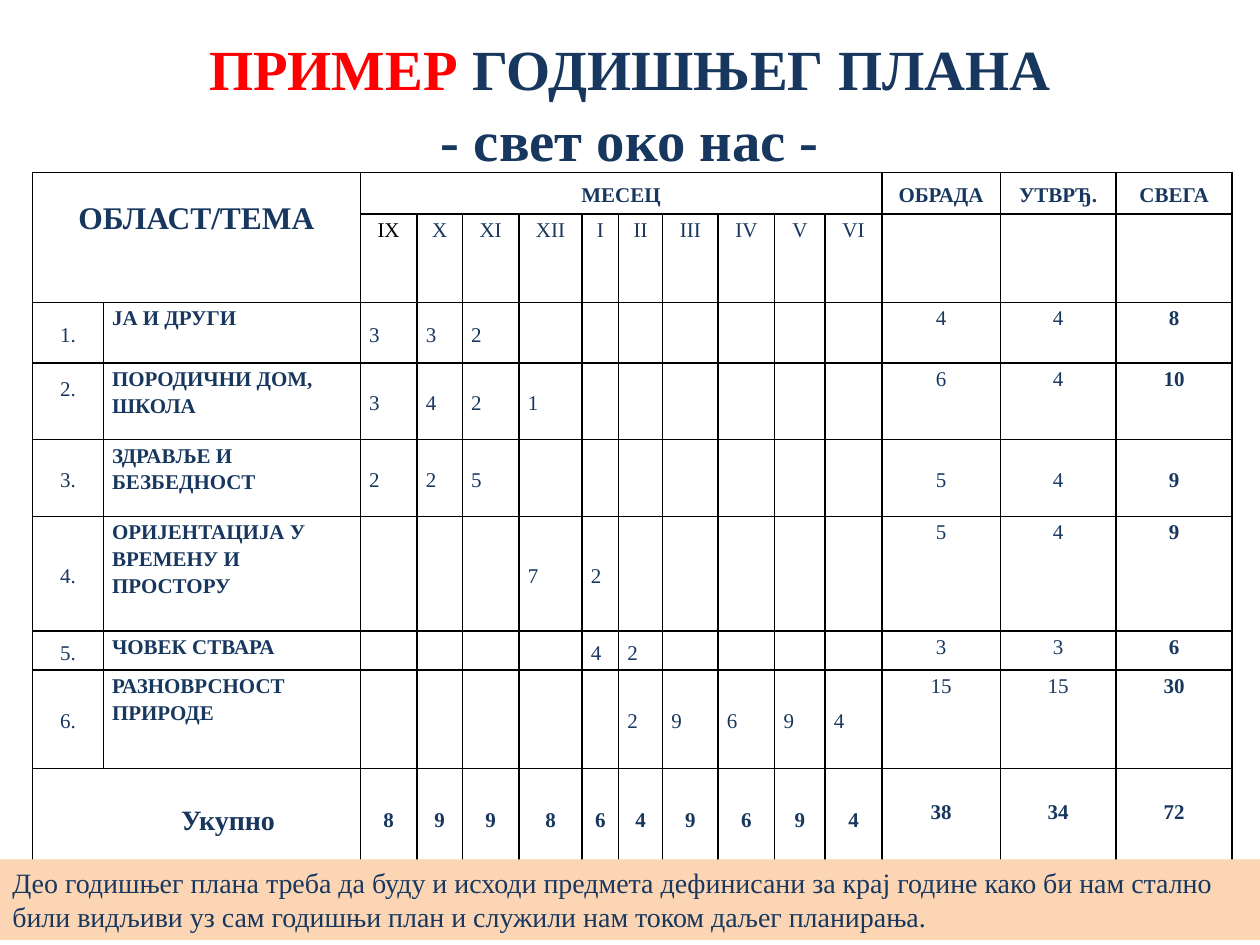
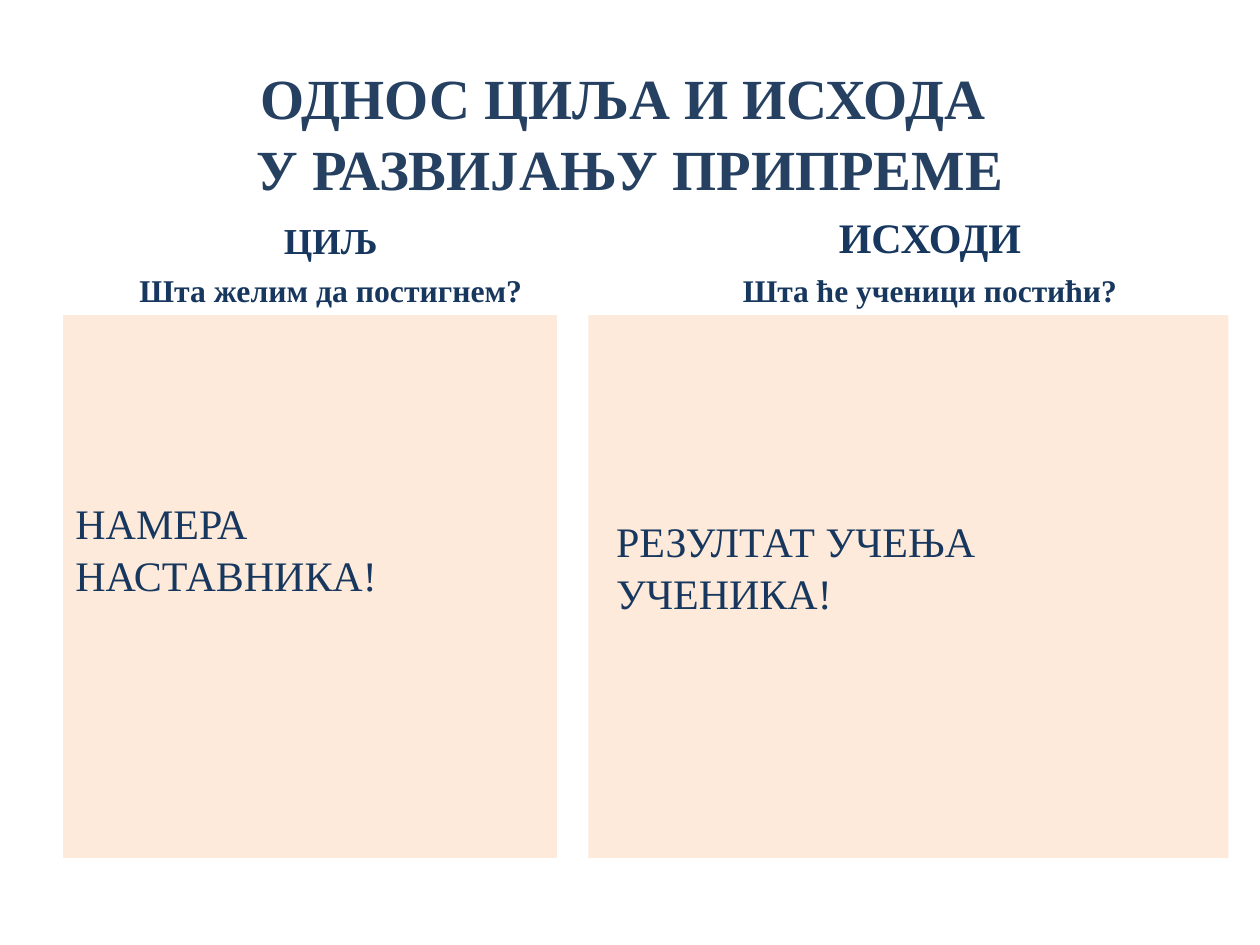
"""Builds two slides: a yearly lesson plan table, and goals set against outcomes."""
from dataclasses import dataclass

from lxml import etree
from pptx import Presentation
from pptx.dml.color import RGBColor
from pptx.enum.shapes import MSO_SHAPE
from pptx.enum.text import MSO_ANCHOR, PP_ALIGN
from pptx.oxml.ns import qn
from pptx.util import Emu, Inches, Pt

LEFT, MID, JUST = PP_ALIGN.LEFT, PP_ALIGN.CENTER, PP_ALIGN.JUSTIFY
TOP, CENTER, BASE = MSO_ANCHOR.TOP, MSO_ANCHOR.MIDDLE, MSO_ANCHOR.BOTTOM
RECT = MSO_SHAPE.RECTANGLE

FONT = "Times New Roman"
HUES = {"navy": "17375E", "slate": "254061", "red": "FF0000", "black": "000000",
        "white": "FFFFFF", "peach": "FCD5B5", "cream": "FDEADA"}
WIDE, HIGH = Inches(10), Inches(7.5)
COLS, ROWS = 100, 75
PAD = (0.1, 0.05, 0.1, 0.05)
TIGHT = (0.07, 0.01, 0.07, 0)

MONTHS = ["IX", "X", "XI", "XII", "I", "II", "III", "IV", "V", "VI"]
SUMS = ["ОБРАДА", "УТВРЂ.", "СВЕГА"]
SPANS = [5.6, 20.4, 4.5, 3.6, 4.5, 5, 2.9, 3.5, 4.4, 4.5, 4, 4.5, 9.4, 9.2, 9.2]
TALL = [3.3, 7, 4.8, 6.1, 6.1, 9.1, 3.1, 7.8, 7.8]
FIRST, LAST = 2, 2 + len(MONTHS)


@dataclass
class Run:
    """A piece of text with its own colour or size."""
    text: str
    hue: str = ""
    size: float = 0


@dataclass
class Box:
    """A place on the grid, in columns and rows."""
    col: float
    row: float
    wide: float
    high: float


@dataclass
class Topic:
    """One topic of the plan: hours by month, new and review lessons."""
    name: str
    start: int
    hours: list[int]
    fresh: int
    drill: int
    anchor: MSO_ANCHOR = TOP
    lift: float = 0

    def month(self, spot: int) -> int:
        """Give the hours in one month."""
        place = spot - self.start
        return self.hours[place] if 0 <= place < len(self.hours) else 0

    def sums(self) -> list[int]:
        """Give new, review and all lessons."""
        return [self.fresh, self.drill, self.fresh + self.drill]


@dataclass
class Side:
    """A heading above a filled panel."""
    head: Box
    lines: list[Run]
    panel: Box
    body: list[str]
    pad: tuple


TOPICS = [
    Topic("ЈА И ДРУГИ", 0, [3, 3, 2], 4, 4),
    Topic("ПОРОДИЧНИ ДОМ, ШКОЛА", 0, [3, 4, 2, 1], 6, 4, lift=0.22),
    Topic("ЗДРАВЉЕ И БЕЗБЕДНОСТ", 0, [2, 2, 5], 5, 4, CENTER),
    Topic("ОРИЈЕНТАЦИЈА У ВРЕМЕНУ И ПРОСТОРУ", 3, [7, 2], 5, 4),
    Topic("ЧОВЕК СТВАРА", 4, [4, 2], 3, 3),
    Topic("РАЗНОВРСНОСТ ПРИРОДЕ", 5, [2, 9, 6, 9, 4], 15, 15),
]

SIDES = [
    Side(Box(3.3, 15.8, 45.9, 9.2),
         [Run("ЦИЉ", size=20.9), Run("Шта желим да постигнем?", size=18.1)],
         Box(5, 25, 39.2, 43.1), ["НАМЕРА НАСТАВНИКА!"], (0.1, 1.44, 0.1, 0.05)),
    Side(Box(51.7, 15, 44.2, 10),
         [Run("ИСХОДИ", size=24), Run("Шта ће ученици постићи?", size=18)],
         Box(46.7, 25, 50.8, 43.1), ["РЕЗУЛТАТ УЧЕЊА ", "УЧЕНИКА!"],
         (0.22, 1.58, 0.1, 0.05)),
]


def across(cols: float) -> Emu:
    """Turn grid columns into a length."""
    return Emu(round(WIDE * cols / COLS))


def down(rows: float) -> Emu:
    """Turn grid rows into a length."""
    return Emu(round(HIGH * rows / ROWS))


def place(box: Box) -> tuple:
    """Turn a grid box into left, top, width and height."""
    return across(box.col), down(box.row), across(box.wide), down(box.high)


def tint(hue: str) -> RGBColor:
    """Look up a colour."""
    return RGBColor.from_string(HUES[hue])


def write(frame, paras: list, *, size: float = 12, hue: str = "navy",
          bold: bool = False, align: PP_ALIGN = LEFT, space: float = 1,
          before: float = 0) -> None:
    """Fill a text frame; a paragraph is a string, a run or a list of runs."""
    for spot, item in enumerate(paras):
        para = frame.paragraphs[0] if spot == 0 else frame.add_paragraph()
        para.alignment, para.line_spacing = align, space
        if spot and before:
            para.space_before = Pt(before)
        for piece in item if isinstance(item, list) else [item]:
            part = piece if isinstance(piece, Run) else Run(piece)
            for turn, text in enumerate(part.text.split("\n")):
                if turn:
                    para.add_line_break()
                run = para.add_run()
                run.text = text
                font = run.font
                font.name, font.bold = FONT, bold
                font.size = Pt(part.size or size)
                font.color.rgb = tint(part.hue or hue)


def block(slide, box: Box, paras: list, *, fill: str = "", pad: tuple = PAD,
          anchor: MSO_ANCHOR = TOP, **style) -> None:
    """Draw a text box, or a filled rectangle with text."""
    if fill:
        shape = slide.shapes.add_shape(RECT, *place(box))
        shape.shadow.inherit = False
        shape.fill.solid()
        shape.fill.fore_color.rgb = tint(fill)
        shape.line.fill.background()
    else:
        shape = slide.shapes.add_textbox(*place(box))
    frame = shape.text_frame
    frame.word_wrap = True
    frame.vertical_anchor = anchor
    (frame.margin_left, frame.margin_top,
     frame.margin_right, frame.margin_bottom) = map(Inches, pad)
    write(frame, paras, **style)


def title(slide, box: Box, runs: list, drop: float) -> None:
    """Draw a slide title."""
    block(slide, box, [runs], pad=(0.1, drop, 0.1, 0.05), size=32.4,
          bold=True, align=MID, space=1.04)


def edge(cell) -> None:
    """Give a cell thin black borders."""
    props = cell._tc.get_or_add_tcPr()
    for spot, side in enumerate(("a:lnL", "a:lnR", "a:lnT", "a:lnB")):
        line = etree.Element(qn(side), w=str(Pt(1)))
        fill = etree.SubElement(line, qn("a:solidFill"))
        etree.SubElement(fill, qn("a:srgbClr"), val=HUES["black"])
        props.insert(spot, line)


def grid(slide, box: Box):
    """Add a plain white table with black borders."""
    shape = slide.shapes.add_table(len(TALL), len(SPANS), *place(box))
    table = shape.table
    table.first_row = table.horz_banding = False
    for col, wide in zip(table.columns, SPANS):
        col.width = across(wide)
    for row, high in zip(table.rows, TALL):
        row.height = down(high)
    for cell in table.iter_cells():
        cell.fill.solid()
        cell.fill.fore_color.rgb = tint("white")
        edge(cell)
        inset(cell, TIGHT)
        para = cell.text_frame.paragraphs[0]
        etree.SubElement(para._p, qn("a:endParaRPr"), sz="1200")
    return table


def inset(cell, pad: tuple) -> None:
    """Set the margins of a cell."""
    (cell.margin_left, cell.margin_top,
     cell.margin_right, cell.margin_bottom) = map(Inches, pad)


def put(cell, text, *, pad: tuple = TIGHT, anchor: MSO_ANCHOR = CENTER,
        align: PP_ALIGN = MID, **style) -> None:
    """Write one cell of the plan."""
    inset(cell, pad)
    cell.vertical_anchor = anchor
    write(cell.text_frame, [str(text)], align=align, space=1.15, **style)


def heads(table) -> None:
    """Write the two heading rows."""
    theme, month = table.cell(0, 0), table.cell(0, FIRST)
    theme.merge(table.cell(1, 1))
    month.merge(table.cell(0, LAST - 1))
    put(theme, "ОБЛАСТ/ТЕМА", pad=(0.07, 0.19, 0.07, 0), anchor=TOP,
        size=18, bold=True)
    put(month, "МЕСЕЦ", bold=True)
    for spot, name in enumerate(SUMS):
        put(table.cell(0, LAST + spot), name, bold=True)
    for spot, name in enumerate(MONTHS):
        put(table.cell(1, FIRST + spot), name, anchor=TOP,
            hue="navy" if spot else "black")


def plan(table) -> None:
    """Write the topics and their totals."""
    for spot, topic in enumerate(TOPICS):
        row = spot + 2
        put(table.cell(row, 0), f"{spot + 1}.", pad=(0.07, 0.01, 0.07, topic.lift))
        put(table.cell(row, 1), topic.name, anchor=TOP, align=LEFT, bold=True)
        for col in range(len(MONTHS)):
            if topic.month(col):
                put(table.cell(row, FIRST + col), topic.month(col), align=LEFT)
        for col, count in enumerate(topic.sums()):
            put(table.cell(row, LAST + col), count, anchor=topic.anchor,
                bold=col == 2)
    row = len(TALL) - 1
    label = table.cell(row, 0)
    label.merge(table.cell(row, 1))
    put(label, "Укупно", pad=(0.57, 0.01, 0.07, 0), size=16, bold=True)
    for col in range(len(MONTHS)):
        total = sum(topic.month(col) for topic in TOPICS)
        put(table.cell(row, FIRST + col), total, bold=True)
    for col, counts in enumerate(zip(*(topic.sums() for topic in TOPICS))):
        put(table.cell(row, LAST + col), sum(counts), anchor=TOP, bold=True,
            pad=(0.07, 0.23, 0.07, 0))


def yearly(slide) -> None:
    """Draw the yearly plan slide."""
    title(slide, Box(0, 0, 100, 15.3),
          [Run("ПРИМЕР ", "red"), Run("ГОДИШЊЕГ ПЛАНА\n- свет око нас -")], 0.25)
    table = grid(slide, Box(2.6, 13.7, sum(SPANS), sum(TALL)))
    heads(table)
    plan(table)
    block(slide, Box(0, 68.2, 100, 6.4),
          ["Део годишњег плана треба да буду и исходи предмета дефинисани за крај "
           "године како би нам стално били видљиви уз сам годишњи план и служили "
           "нам током даљег планирања."], fill="peach", size=16)


def goals(slide) -> None:
    """Draw the goals and outcomes slide."""
    title(slide, Box(2.5, 0.8, 95, 14.7),
          [Run("ОДНОС ЦИЉА И ИСХОДА \nУ РАЗВИЈАЊУ ПРИПРЕМЕ", "slate")], 0.4)
    for side in SIDES:
        block(slide, side.head, side.lines, anchor=BASE, bold=True,
              align=MID, before=5)
        block(slide, side.panel, side.body, fill="cream", pad=side.pad,
              size=24, align=JUST, space=1.03)


def main() -> None:
    """Build and save the slides."""
    deck = Presentation()
    deck.slide_width, deck.slide_height = WIDE, HIGH
    for draw in (yearly, goals):
        draw(deck.slides.add_slide(deck.slide_layouts[6]))
    deck.save("out.pptx")


if __name__ == "__main__":
    main()
